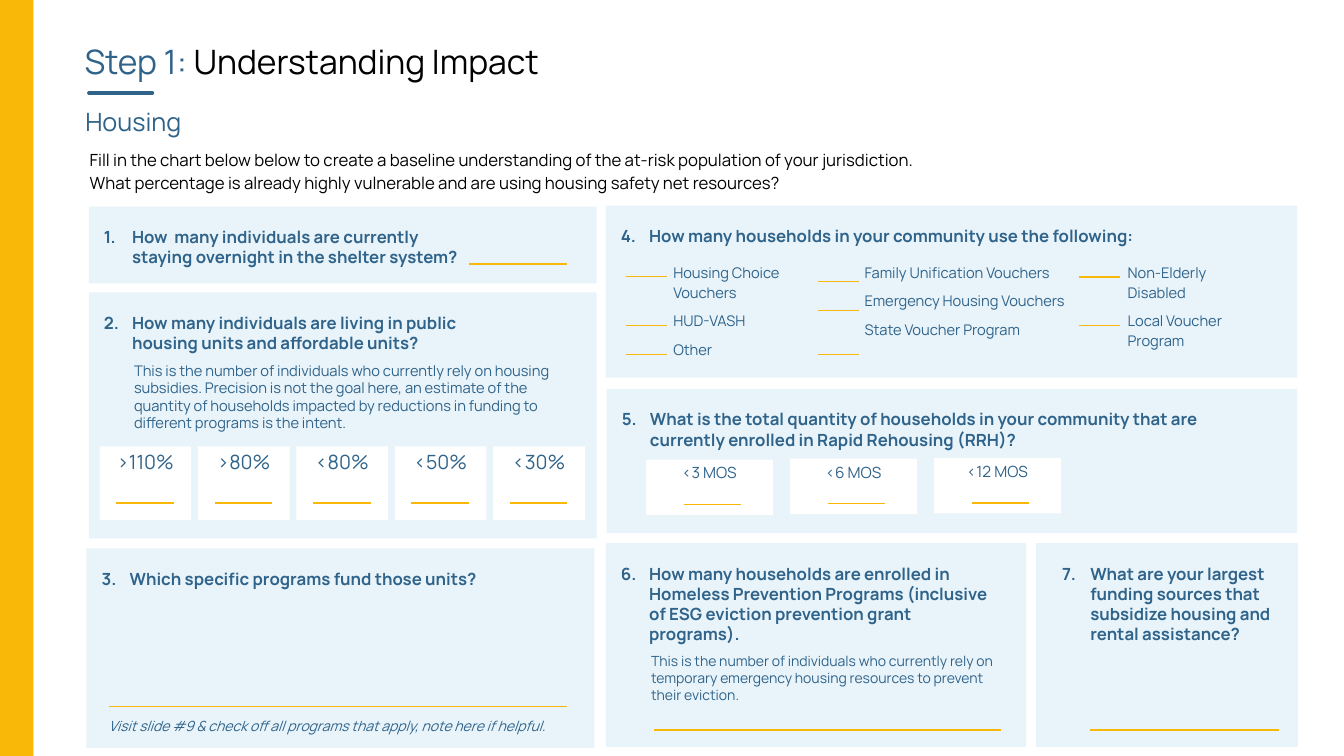
"""Build the housing worksheet slide of the impact assessment."""
from copy import deepcopy

from lxml.etree import SubElement
from pptx import Presentation
from pptx.dml.color import RGBColor
from pptx.enum.shapes import MSO_CONNECTOR as Link, MSO_SHAPE as Preset
from pptx.enum.text import MSO_ANCHOR as Anchor, MSO_AUTO_SIZE as AutoSize, PP_ALIGN as Align
from pptx.oxml.ns import qn
from pptx.util import Cm, Pt

BLUE = RGBColor(0x30, 0x63, 0x8A)
GOLD = RGBColor(0xF9, 0xB7, 0x08)
PALE = RGBColor(0xE8, 0xF4, 0xFA)
WHITE = RGBColor(0xFF, 0xFF, 0xFF)
BLACK = RGBColor(0x00, 0x00, 0x00)
FONT = "Manrope"

TITLE = [("Step 1: ", BLUE), ("Understanding Impact", BLACK)]
SECTION = "Housing"
INTRO = ("Fill in the chart below below to create a baseline understanding of the "
         "at-risk population of your jurisdiction. \v"
         "What percentage is already highly vulnerable and are using housing safety net resources?")
HINT = "Visit slide #9 & check off all programs that apply, note here if helpful."

# question, note, note size, panel box, text left, text width
QUESTIONS = [
    ("How  many individuals are currently staying overnight in the shelter system?",
     None, None, (2.24, 5.21, 12.8, 1.93), 2.24, 9.6),
    ("How many individuals are living in public \vhousing units and affordable units?",
     "This is the number of individuals who currently rely on housing subsidies. "
     "Precision is not the goal here, an estimate of the quantity of households impacted "
     "by reductions in funding to different programs is the intent.",
     10.5, (2.24, 7.37, 12.8, 6.2), 2.24, 12.19),
    ("Which specific programs fund those units?",
     None, None, (2.18, 13.82, 12.8, 5.03), 2.18, 11.4),
    ("How many households in your community use the following:",
     None, None, (15.27, 5.18, 17.42, 4.34), 15.27, 15.44),
    ("What is the total quantity of households in your community that are "
     "currently enrolled in Rapid Rehousing (RRH)?",
     None, None, (15.29, 9.8, 17.4, 3.63), 15.29, 15.42),
    ("How many households are enrolled in Homeless Prevention Programs "
     "(inclusive of ESG eviction prevention grant programs).",
     "This is the number of individuals who currently rely on temporary emergency "
     "housing resources to prevent their eviction.",
     10, (15.27, 13.69, 10.59, 5.13), 15.27, 10.24),
    ("What are your largest funding sources that subsidize housing and rental assistance?",
     None, None, (26.11, 13.69, 6.6, 5.13), 26.39, 6.05),
]

# programs, text left, text width, blank left, blank heights
VOUCHERS = [
    (["Housing Choice Vouchers", "HUD-VASH", "Other"], 16.97, 3.81, 15.77, [6.96, 8.2, 8.94]),
    (["Family Unification Vouchers", "Emergency Housing Vouchers", "State Voucher Program"],
     21.79, 5.38, 20.62, [7.09, 7.82, 8.94]),
    (["Non-Elderly Disabled", "Local Voucher Program"], 28.42, 3.45, 27.18, [6.98, 8.2]),
]
VOUCHER_TOP, VOUCHER_HEIGHT, VOUCHER_BLANK = 6.45, 2.69, 1.04

CARDS = [
    {"labels": [">110%", ">80%", "<80%", "<50%", "<30%"], "size": 14, "left": 2.51, "top": 11.25,
     "pitch": 2.48, "rise": 0, "width": 2.31, "height": 1.85, "inset": 0.42, "drop": 1.42},
    {"labels": ["<3 MOS", "<6 MOS", "<12 MOS"], "size": 11, "left": 16.28, "top": 11.58,
     "pitch": 3.63, "rise": 0.02, "width": 3.2, "height": 1.4, "inset": 0.95, "drop": 1.13},
]
CARD_BLANK = 1.45

# left, right, height of each long answer line
ANSWERS = [(11.81, 14.3, 6.65), (2.74, 14.3, 17.81), (16.48, 25.22, 18.39), (27.46, 32.23, 18.39)]


def assign(target, values):
    for name, value in values.items():
        setattr(target, name, value)


def place(part, left, top, width, height):
    assign(part, {"left": Cm(left), "top": Cm(top), "width": Cm(width), "height": Cm(height)})


def set_frame(frame, left=0.25, top=0.13):
    assign(frame, {"word_wrap": True, "auto_size": AutoSize.NONE, "vertical_anchor": Anchor.TOP,
                   "margin_left": Cm(left), "margin_top": Cm(top),
                   "margin_right": Cm(0.25), "margin_bottom": Cm(0.13)})


def style(run, size, color, bold=False, italic=False):
    assign(run.font, {"name": FONT, "size": Pt(size), "bold": bold, "italic": italic})
    run.font.color.rgb = color


def write(paragraph, text, size, color=BLUE, align=Align.LEFT, spacing=1.0, after=0, **look):
    paragraph.text = text
    assign(paragraph, {"alignment": align, "line_spacing": spacing,
                       "space_before": Pt(0), "space_after": Pt(after)})
    for run in paragraph.runs:
        style(run, size, color, **look)
    for line_break in paragraph._p.findall(qn("a:br")):
        line_break.append(deepcopy(paragraph.runs[0]._r.rPr))


def indent(paragraph, left, first, number=None):
    props = paragraph._p.get_or_add_pPr()
    props.set("marL", str(Cm(left)))
    props.set("indent", str(Cm(first)))
    if number:
        SubElement(props, qn("a:buAutoNum"), type="arabicPeriod", startAt=str(number))
    else:
        SubElement(props, qn("a:buNone"))


def add_text(shapes, box, **margins):
    frame = shapes.add_textbox(*map(Cm, box)).text_frame
    set_frame(frame, **margins)
    return frame


def add_block(shapes, box, color):
    block = shapes.add_shape(Preset.RECTANGLE, *map(Cm, box))
    block.shadow.inherit = False
    block.fill.solid()
    block.fill.fore_color.rgb = color
    block.line.fill.background()
    return block


def add_rule(shapes, left, right, height, color=GOLD, weight=1):
    rule = shapes.add_connector(Link.STRAIGHT, Cm(left), Cm(height), Cm(right), Cm(height))
    rule.line.color.rgb = color
    rule.line.width = Pt(weight)
    SubElement(rule._element.spPr, qn("a:effectLst"))
    return rule


def add_heading(slide):
    shapes = slide.shapes
    title, intro = slide.placeholders
    place(title, 1.88, 0.91, 31.45, 1.63)
    set_frame(title.text_frame)
    heading = title.text_frame.paragraphs[0]
    heading.alignment = Align.LEFT
    for words, color in TITLE:
        run = heading.add_run()
        run.text = words
        style(run, 24, color)

    place(intro, 2.01, 3.56, 31.32, 1.4)
    set_frame(intro.text_frame)
    summary = intro.text_frame.paragraphs[0]
    write(summary, INTRO, 12, BLACK, spacing=1.15, after=6)
    indent(summary, 0, 0)

    add_block(shapes, (0, 0, 0.84, 19.05), GOLD)
    underline = add_rule(shapes, 2.24, 3.84, 2.34, BLUE, 2.5)
    underline._element.spPr.find(qn("a:ln")).set("cap", "rnd")
    section = add_text(shapes, (1.9, 2.36, 16.94, 1.14))
    write(section.paragraphs[0], SECTION, 18, spacing=1.25, after=12)


def add_questions(shapes):
    for number, (question, note, note_size, panel, left, width) in enumerate(QUESTIONS, 1):
        add_block(shapes, panel, PALE)
        frame = add_text(shapes, (left, panel[1], width, panel[3]), top=0.51)
        write(frame.paragraphs[0], question, 12, after=6, bold=True)
        indent(frame.paragraphs[0], 0.84, -0.71, number)
        if note:
            detail = frame.add_paragraph()
            write(detail, note, note_size, after=4)
            indent(detail, 0.89, 0)


def add_vouchers(shapes):
    for programs, left, width, blank_left, heights in VOUCHERS:
        frame = add_text(shapes, (left, VOUCHER_TOP, width, VOUCHER_HEIGHT), left=0)
        for row, program in enumerate(programs):
            entry = frame.add_paragraph() if row else frame.paragraphs[0]
            write(entry, program, 10.5, spacing=1.14, after=6)
        for height in heights:
            add_rule(shapes, blank_left, blank_left + VOUCHER_BLANK, height)


def add_cards(shapes):
    for group in CARDS:
        for column, label in enumerate(group["labels"]):
            left = group["left"] + column * group["pitch"]
            top = group["top"] - column * group["rise"]
            card = add_block(shapes, (left, top, group["width"], group["height"]), WHITE)
            set_frame(card.text_frame, top=0.1)
            write(card.text_frame.paragraphs[0], label, group["size"], align=Align.CENTER)
            start = left + group["inset"]
            add_rule(shapes, start, start + CARD_BLANK, top + group["drop"])


def main():
    deck = Presentation()
    assign(deck, {"slide_width": Cm(33.87), "slide_height": Cm(19.05)})
    slide = deck.slides.add_slide(deck.slide_layouts[1])
    add_heading(slide)
    add_questions(slide.shapes)
    add_vouchers(slide.shapes)
    add_cards(slide.shapes)
    for answer in ANSWERS:
        add_rule(slide.shapes, *answer)
    hint = add_text(slide.shapes, (2.49, 17.96, 11.81, 0.69))
    write(hint.paragraphs[0], HINT, 10, italic=True)
    deck.save("out.pptx")


if __name__ == "__main__":
    main()
